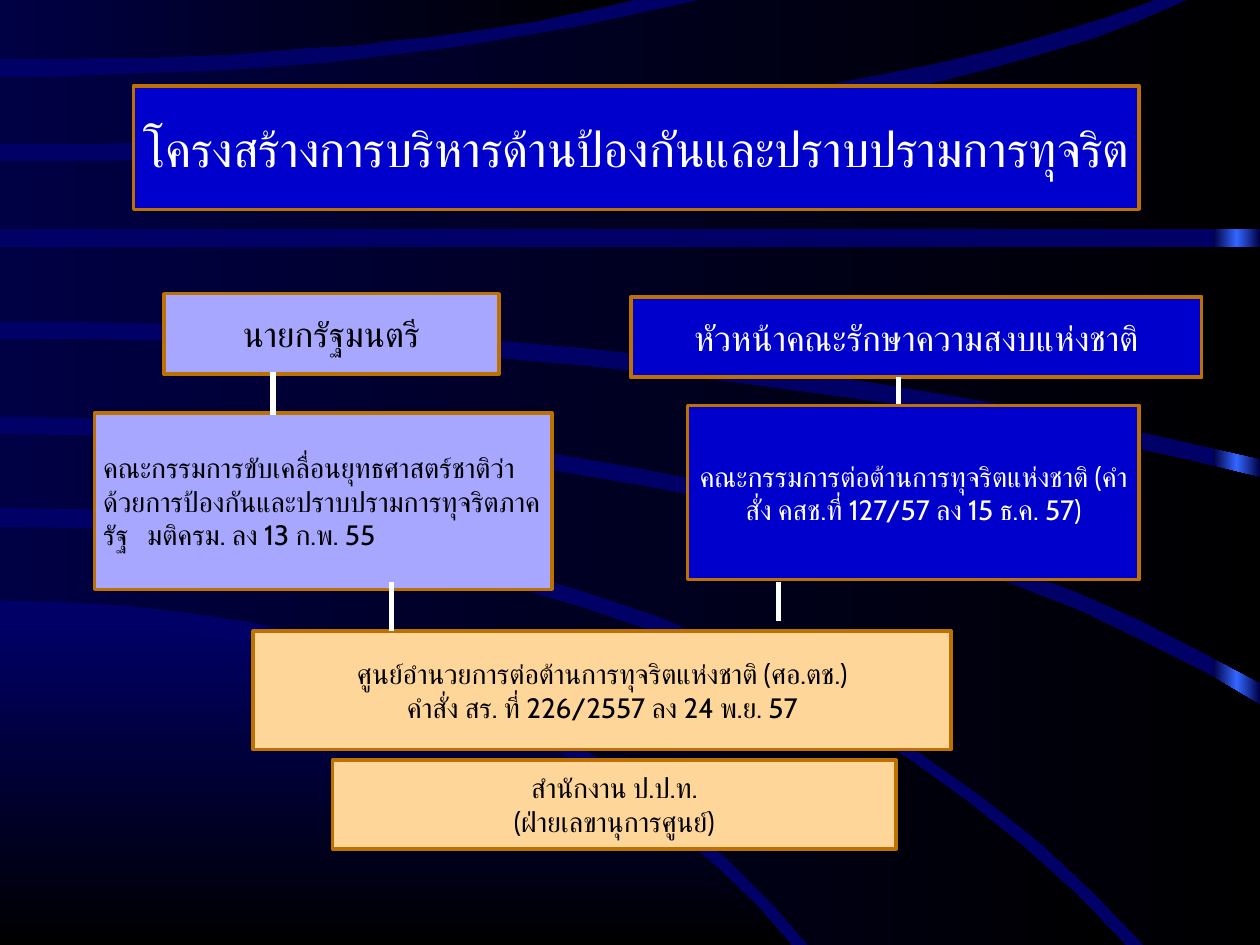
"""Build a slide showing the administrative structure for anti-corruption work."""
from copy import deepcopy

from lxml.etree import SubElement
from pptx import Presentation
from pptx.dml.color import RGBColor
from pptx.enum.shapes import MSO_CONNECTOR, MSO_SHAPE
from pptx.enum.text import MSO_ANCHOR, MSO_AUTO_SIZE, PP_ALIGN
from pptx.oxml.ns import qn
from pptx.util import Pt

COLORS = {
    "backdrop": "000066", "navy": "000044", "black": "000000", "glow": "3366FF",
    "blue": "0000CC", "lilac": "A7A7FF", "peach": "FFD699",
    "border": "BD7100", "white": "FFFFFF",
}
RGB = {name: RGBColor.from_string(value) for name, value in COLORS.items()}
WIDTH, HEIGHT = 720, 540


def write_box(box, text, *, place, fill, color="black", size=16, align=PP_ALIGN.CENTER):
    box.left, box.top, box.width, box.height = map(Pt, place)
    box.fill.solid()
    box.fill.fore_color.rgb = RGB[fill]
    box.line.color.rgb = RGB["border"]
    box.line.width = Pt(2)
    frame = box.text_frame
    frame.text = text
    frame.word_wrap = True
    frame.auto_size = MSO_AUTO_SIZE.NONE
    frame.vertical_anchor = MSO_ANCHOR.MIDDLE
    frame.margin_left = frame.margin_right = Pt(5)
    frame.margin_top = frame.margin_bottom = Pt(2.7)
    for paragraph in frame.paragraphs:
        paragraph.alignment = align
        for run in paragraph.runs:
            run.font.name = "Cabin"
            run.font.size = Pt(size)
            run.font.color.rgb = RGB[color]
            SubElement(run.font._element, qn("a:cs"), typeface="Cabin")


def shade(panel, start, end, angle=0):
    panel.shadow.inherit = False
    panel.line.fill.background()
    panel.fill.gradient()
    panel.fill.gradient_angle = angle
    for stop, name in zip(panel.fill.gradient_stops, (start, end)):
        stop.color.rgb = RGB[name]


prs = Presentation()
prs.slide_width, prs.slide_height = Pt(WIDTH), Pt(HEIGHT)
slide = prs.slides.add_slide(prs.slide_layouts[5])
shapes = slide.shapes
slide.background.fill.solid()
slide.background.fill.fore_color.rgb = RGB["backdrop"]

glow_strip = shapes.add_shape(MSO_SHAPE.RECTANGLE, Pt(693.4), 0, Pt(26.6), Pt(HEIGHT))
shade(glow_strip, "navy", "navy")
stops = glow_strip.fill._xPr.find(qn("a:gradFill")).find(qn("a:gsLst"))
middle = deepcopy(stops[0])
middle.set("pos", "50000")
middle[0].set("val", COLORS["glow"])
stops.insert(1, middle)

# Each edge: height at the left side, bend x, end x, end y.
bands = [
    ((354, 293, 452, HEIGHT), (HEIGHT, 226, 452, HEIGHT)),
    ((301, 425, 643, HEIGHT), (343, 300, 462, HEIGHT)),
    ((248, 470, WIDTH, 403), (290, 425, 654, HEIGHT)),
    ((194, 394, WIDTH, 273), (238, 458, WIDTH, 390)),
    ((141, 360, WIDTH, 141), (184, 404, WIDTH, 262)),
    ((92, 485, 679, 0), (131, 360, WIDTH, 131)),
    ((44, 224, 400, 0), (82, 439, 659, 0)),
    ((0, 180, 361, 0), (34, 224, 361, 0)),
]
STEPS = 16
for index, edges in enumerate(bands):
    upper, lower = [
        [(2 * t * (1 - t) * bend + t * t * end_x, start_y + t * t * (end_y - start_y))
         for t in (step / STEPS for step in range(STEPS + 1))]
        for start_y, bend, end_x, end_y in edges
    ]
    corner = (max(upper[-1][0], lower[-1][0]), min(upper[-1], lower[-1])[1])
    builder = shapes.build_freeform(*upper[0], scale=Pt(1))
    builder.add_line_segments(upper[1:] + [corner] + lower[::-1])
    band = builder.convert_to_shape()
    if index == 0:
        shade(band, "backdrop", "black", angle=270)
    else:
        shade(band, "navy", "black")

heading = shapes.title
shapes._spTree.append(heading._element)
write_box(heading, "โครงสร้างการบริหารด้านป้องกันและปราบปรามการทุจริต",
          place=(76.3, 49, 574.6, 70.6), fill="blue", color="white", size=28)

offices = [
    ("นายกรัฐมนตรี",
     dict(place=(93.6, 167.8, 191.5, 46), fill="lilac", size=20)),
    ("หัวหน้าคณะรักษาความสงบแห่งชาติ",
     dict(place=(360.5, 169.6, 326.2, 46), fill="blue", color="white", size=20)),
    ("คณะกรรมการขับเคลื่อนยุทธศาสตร์ชาติว่าด้วยการป้องกันและปราบปรามการทุจริตภาครัฐ   มติครม. ลง 13 ก.พ. 55",
     dict(place=(54, 236, 261.4, 100.8), fill="lilac", align=PP_ALIGN.LEFT)),
    ("คณะกรรมการต่อต้านการทุจริตแห่งชาติ (คำสั่ง คสช.ที่ 127/57 ลง 15 ธ.ค. 57)",
     dict(place=(393, 231.8, 258, 99.4), fill="blue", color="white")),
    ("ศูนย์อำนวยการต่อต้านการทุจริตแห่งชาติ (ศอ.ตช.)\nคำสั่ง สร. ที่ 226/2557 ลง 24 พ.ย. 57",
     dict(place=(144.7, 360.7, 398.9, 67.7), fill="peach")),
    ("สำนักงาน ป.ป.ท.\n(ฝ่ายเลขานุการศูนย์)",
     dict(place=(190, 434.2, 322, 51), fill="peach")),
]
for text, style in offices:
    office = shapes.add_shape(MSO_SHAPE.RECTANGLE, 0, 0, 0, 0)
    office.shadow.inherit = False
    write_box(office, text, **style)

links = [(223.9, 332.6, 360.7), (513.4, 215.3, 231.1), (445, 332.6, 355), (156, 212.4, 237)]
for x, top, bottom in links:
    link = shapes.add_connector(MSO_CONNECTOR.STRAIGHT, Pt(x), Pt(top), Pt(x), Pt(bottom))
    link.line.color.rgb = RGB["white"]
    link.line.width = Pt(3)
    SubElement(link._element.spPr, qn("a:effectLst"))

prs.save("out.pptx")
